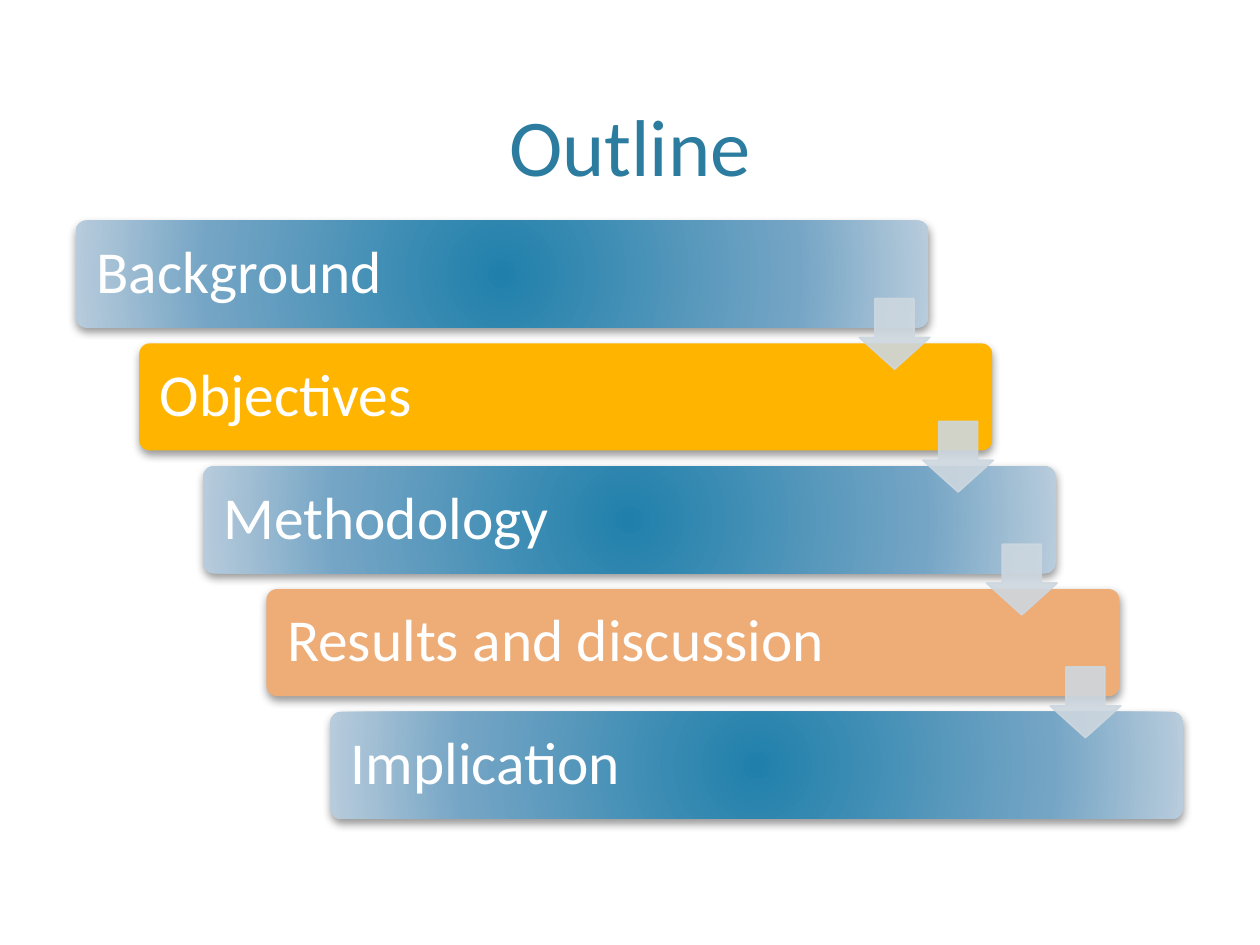
from dataclasses import dataclass
from typing import Optional

from lxml import etree
from pptx import Presentation
from pptx.dml.color import RGBColor
from pptx.enum.shapes import MSO_SHAPE
from pptx.enum.text import MSO_ANCHOR, PP_ALIGN
from pptx.oxml.ns import qn
from pptx.util import Inches, Pt

ROUNDED = MSO_SHAPE.ROUNDED_RECTANGLE
DOWN_ARROW = MSO_SHAPE.DOWN_ARROW
MIDDLE, BOTTOM = MSO_ANCHOR.MIDDLE, MSO_ANCHOR.BOTTOM
CENTER = PP_ALIGN.CENTER

TITLE_BLUE = RGBColor(0x2C, 0x7C, 0x9F)
DEEP_BLUE = RGBColor(0x20, 0x80, 0xAB)
MID_BLUE = RGBColor(0x75, 0xA5, 0xC5)
PALE_BLUE = RGBColor(0xB8, 0xCC, 0xDC)
AMBER = RGBColor(0xFF, 0xB4, 0x00)
PEACH = RGBColor(0xEE, 0xAC, 0x77)
ARROW_GREY = RGBColor(0xCD, 0xD7, 0xDF)
WHITE = RGBColor(0xFF, 0xFF, 0xFF)
BLACK = RGBColor(0, 0, 0)

FONT = "Calibri"
BLUE_GLOW = ((0, DEEP_BLUE), (69, MID_BLUE), (100, PALE_BLUE))

# Staircase geometry in inches
LEFT, TOP = 0.6, 1.75
STEP_X, STEP_Y = 0.505, 0.975
BAR_WIDTH, BAR_HEIGHT = 6.77, 0.85
LABEL_INSET, LABEL_WIDTH, LABEL_HEIGHT = 0.025, 5.66, 0.8
ARROW_DX, ARROW_DY, ARROW_SIZE = 6.22, 0.62, 0.56


@dataclass
class Step:
    label: str
    color: Optional[RGBColor] = None  # None gives the blue glow


STEPS = [
    Step("Background"),
    Step("Objectives", AMBER),
    Step("Methodology"),
    Step("Results and discussion", PEACH),
    Step("Implication"),
]


def add_node(parent, tag: str, **attributes):
    return etree.SubElement(parent, qn(tag), {k: str(v) for k, v in attributes.items()})


def add_run(paragraph, text: str, size: float, color: RGBColor) -> None:
    run = paragraph.add_run()
    run.text = text
    run.font.name = FONT
    run.font.size = Pt(size)
    run.font.color.rgb = color


def add_shadow(shape) -> None:
    shape.shadow.inherit = False
    effects = shape._element.spPr.find(qn("a:effectLst"))
    shadow = add_node(effects, "a:outerShdw", blurRad=Pt(5), dist=Pt(2),
                      dir=90 * 60000, rotWithShape=0)
    color = add_node(shadow, "a:srgbClr", val=BLACK)
    add_node(color, "a:alpha", val=40000)


def fill_with_glow(shape) -> None:
    gradient = etree.Element(qn("a:gradFill"), rotWithShape="1")
    stops = add_node(gradient, "a:gsLst")
    for percent, color in BLUE_GLOW:
        stop = add_node(stops, "a:gs", pos=percent * 1000)
        add_node(stop, "a:srgbClr", val=color)
    circle = add_node(gradient, "a:path", path="circle")
    add_node(circle, "a:fillToRect", l=100000, t=100000, r=100000, b=100000)
    shape._element.spPr.find(qn("a:prstGeom")).addnext(gradient)


def add_bar(shapes, step: Step, x: float, y: float) -> None:
    bar = shapes.add_shape(ROUNDED, Inches(x), Inches(y),
                           Inches(BAR_WIDTH), Inches(BAR_HEIGHT))
    bar.adjustments[0] = 0.1
    if step.color is None:
        fill_with_glow(bar)
    else:
        bar.fill.solid()
        bar.fill.fore_color.rgb = step.color
    bar.line.fill.background()
    add_shadow(bar)

    label = shapes.add_textbox(Inches(x + LABEL_INSET), Inches(y + LABEL_INSET),
                               Inches(LABEL_WIDTH), Inches(LABEL_HEIGHT))
    frame = label.text_frame
    frame.word_wrap = True
    frame.vertical_anchor = MIDDLE
    frame.margin_left = frame.margin_right = Inches(0.14)
    frame.margin_top = frame.margin_bottom = Inches(0.14)
    frame.paragraphs[0].line_spacing = 0.9
    add_run(frame.paragraphs[0], step.label, 34, WHITE)


def add_arrow(shapes, x: float, y: float) -> None:
    arrow = shapes.add_shape(DOWN_ARROW, Inches(x), Inches(y),
                             Inches(ARROW_SIZE), Inches(ARROW_SIZE))
    arrow.adjustments[0] = 0.55
    arrow.adjustments[1] = 0.45
    arrow.shadow.inherit = False
    arrow.line.width = Pt(1)
    for paint in (arrow.fill, arrow.line.fill):
        paint.solid()
        paint.fore_color.rgb = ARROW_GREY
    for color in arrow._element.spPr.iter(qn("a:srgbClr")):
        add_node(color, "a:alpha", val=90000)


def main() -> None:
    prs = Presentation()
    prs.slide_width, prs.slide_height = Inches(10), Inches(7.5)
    slide = prs.slides.add_slide(prs.slide_layouts[5])

    # Title
    title = slide.shapes.title
    title.left, title.top = Inches(0.6), Inches(0.12)
    title.width, title.height = Inches(8.8), Inches(1.46)
    title.text_frame.vertical_anchor = BOTTOM
    heading = title.text_frame.paragraphs[0]
    heading.alignment = CENTER
    add_run(heading, "Outline", 46, TITLE_BLUE)

    # Staircase of bars, then the arrows that lead from each to the next
    staircase = slide.shapes.add_group_shape().shapes
    corners = [(LEFT + i * STEP_X, TOP + i * STEP_Y) for i in range(len(STEPS))]
    for step, (x, y) in zip(STEPS, corners):
        add_bar(staircase, step, x, y)
    for x, y in corners[:-1]:
        add_arrow(staircase, x + ARROW_DX, y + ARROW_DY)

    prs.save("out.pptx")


if __name__ == "__main__":
    main()
